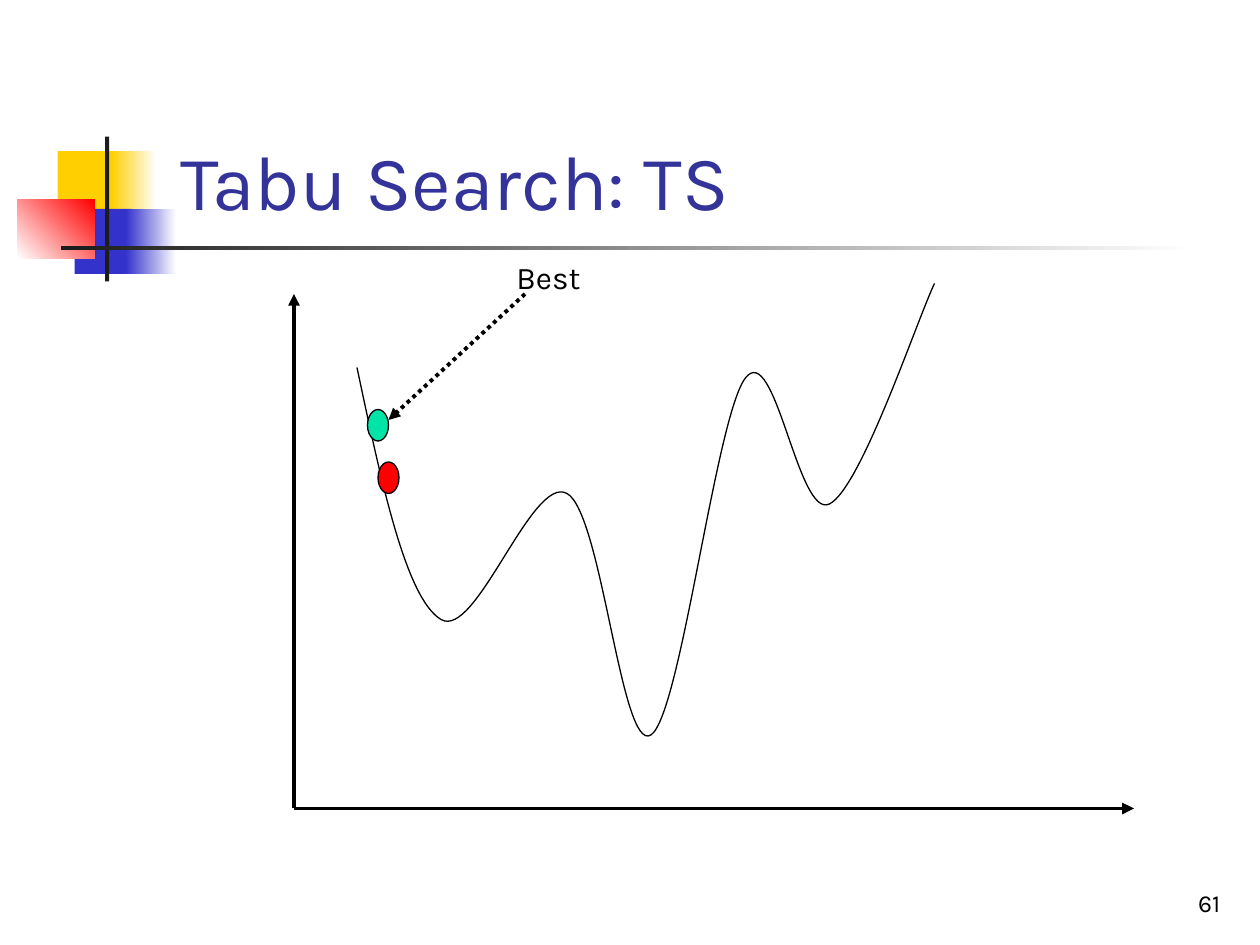
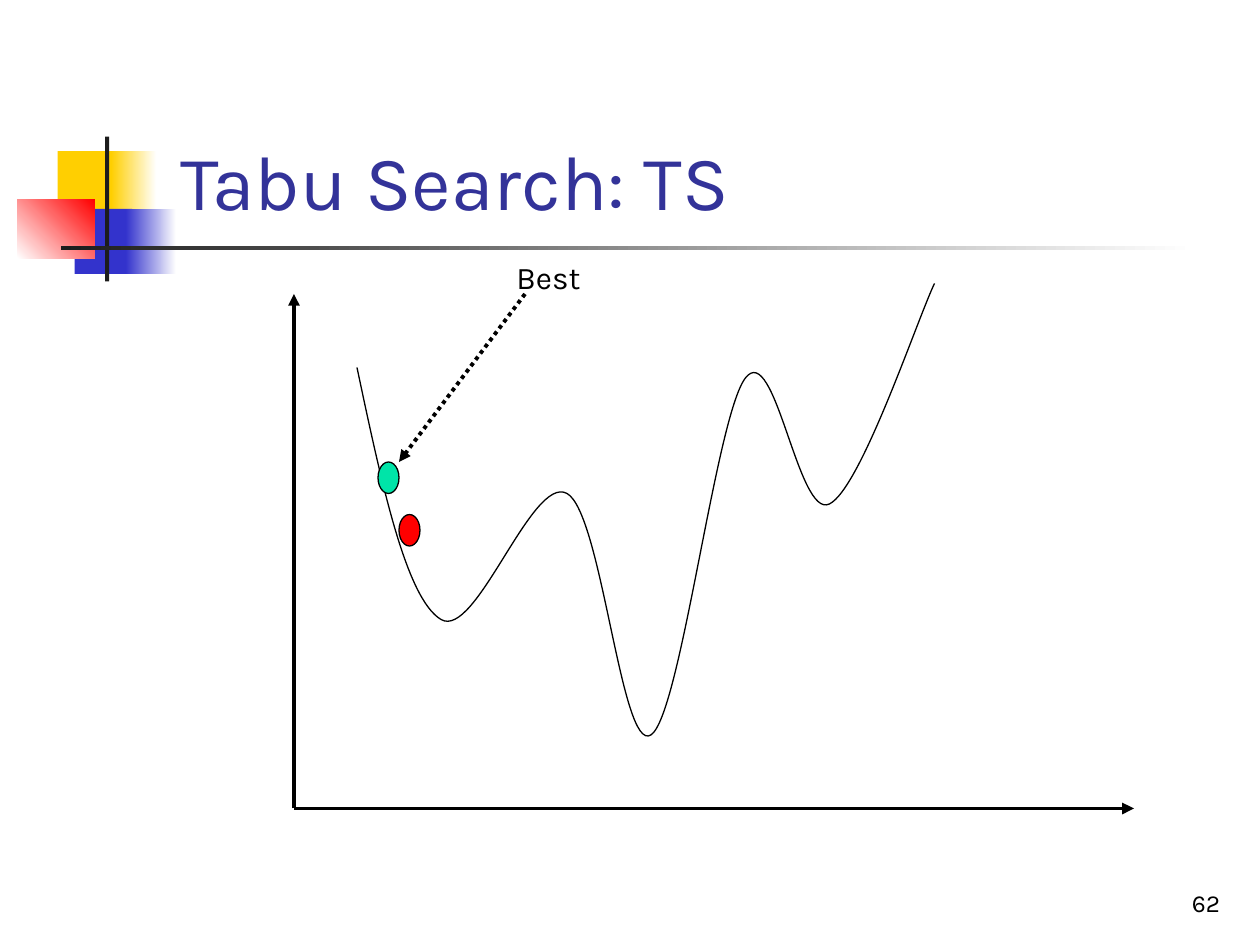
from dataclasses import dataclass

from lxml import etree
from pptx import Presentation
from pptx.dml.color import RGBColor
from pptx.enum.dml import MSO_LINE
from pptx.enum.shapes import MSO_CONNECTOR, MSO_SHAPE
from pptx.enum.text import MSO_ANCHOR, MSO_AUTO_SIZE, PP_ALIGN
from pptx.oxml.ns import qn
from pptx.util import Inches, Pt

RECT, OVAL = MSO_SHAPE.RECTANGLE, MSO_SHAPE.OVAL
STRAIGHT = MSO_CONNECTOR.STRAIGHT
DOTTED = MSO_LINE.ROUND_DOT
BOTTOM, TOP = MSO_ANCHOR.BOTTOM, MSO_ANCHOR.TOP
LEFT, RIGHT = PP_ALIGN.LEFT, PP_ALIGN.RIGHT
NO_FIT = MSO_AUTO_SIZE.NONE
TITLE_ONLY = 5

SLIDE_W, SLIDE_H = Inches(10), Inches(7.5)
COLS, ROWS = 120, 90


@dataclass(frozen=True)
class Theme:
    font: str = "Karla"
    title_size: int = 44
    label_size: int = 18
    number_size: int = 14
    thin: float = 0.75
    thick: float = 2.25
    title: str = "333399"
    ink: str = "000000"
    paper: str = "FFFFFF"
    yellow: str = "FFCF01"
    blue: str = "3333CC"
    red: str = "FF0000"
    bar: str = "1C1C1C"
    best: str = "00E4A8"
    current: str = "FF0000"


@dataclass(frozen=True)
class Box:
    """A region in columns and rows of the slide grid."""
    left: float
    top: float
    width: float
    height: float

    def point(self, x, y):
        return (round((self.left + x) * SLIDE_W / COLS),
                round((self.top + y) * SLIDE_H / ROWS))

    def area(self, x, y, w, h):
        return *self.point(x, y), round(w * SLIDE_W / COLS), round(h * SLIDE_H / ROWS)

    def whole(self):
        return self.area(0, 0, self.width, self.height)


THEME = Theme()
ORNAMENT = Box(1.65, 13, 112.15, 13.8)
TITLE = Box(16, 11.3, 102.2, 10.8)
NUMBER = Box(92.4, 82, 25, 6)
PLOT = Box(28, 24, 80, 53)

# Bottoms and peaks of the landscape, with a lead-in and a lead-out knot
KNOTS = [(0, -31), (6, 11), (14, 35), (26, 23), (34, 46), (43, 12),
         (51, 24), (61, 3), (61, 3)]
MARKER_W, MARKER_H = 2, 3


def rgb(color):
    return RGBColor.from_string(color)


def add_figure(slide, kind, area, colors, angle=0, outline=None):
    """Add a shape filled with one colour, or with a gradient of two."""
    sp = slide.shapes.add_shape(kind, *area)
    sp.shadow.inherit = False
    if len(colors) == 1:
        sp.fill.solid()
        sp.fill.fore_color.rgb = rgb(colors[0])
    else:
        sp.fill.gradient()
        sp.fill.gradient_angle = angle
        for stop, color in zip(sp.fill.gradient_stops, colors):
            stop.color.rgb = rgb(color)
    if outline:
        sp.line.color.rgb = rgb(outline)
        sp.line.width = Pt(THEME.thin)
    else:
        sp.line.fill.background()


def add_arrow(slide, start, end, dash=None):
    sp = slide.shapes.add_connector(STRAIGHT, *start, *end)
    sp.line.color.rgb = rgb(THEME.ink)
    sp.line.width = Pt(THEME.thick)
    if dash:
        sp.line.dash_style = dash
    props = sp._element.spPr
    etree.SubElement(props.find(qn("a:ln")), qn("a:tailEnd"), type="triangle")
    etree.SubElement(props, qn("a:effectLst"))


def write(sp, text, size, color, anchor=TOP, align=LEFT):
    tf = sp.text_frame
    frame_format = {"word_wrap": True, "auto_size": NO_FIT, "vertical_anchor": anchor}
    for name, value in frame_format.items():
        setattr(tf, name, value)
    p = tf.paragraphs[0]
    p.alignment = align
    r = p.add_run()
    r.text = text
    for name, value in {"name": THEME.font, "size": Pt(size)}.items():
        setattr(r.font, name, value)
    r.font.color.rgb = rgb(color)


def add_ornament(slide, box):
    t = THEME
    parts = [
        ((3.85, 1.4, 5.8, 6.2), [t.yellow], 0),
        ((8.95, 1.4, 4.3, 6.2), [t.yellow, t.paper], 0),
        ((5.45, 6.9, 5.5, 6.2), [t.blue], 0),
        ((10.35, 6.9, 4.8, 6.2), [t.blue, t.paper], 0),
        ((0, 6, 7.4, 5.6), [t.paper, t.red], 45),
        ((8.35, 0, 0.4, 13.8), [t.bar], 0),
        ((4.15, 10.4, 108, 0.4), [t.bar, t.paper], 0),
    ]
    for place, colors, angle in parts:
        add_figure(slide, RECT, box.area(*place), colors, angle)


def add_title(slide, box, text):
    sp = slide.shapes.title
    sp.left, sp.top, sp.width, sp.height = box.whole()
    write(sp, text, THEME.title_size, THEME.title, BOTTOM)


def add_number(slide, box, number):
    sp = slide.shapes.add_textbox(*box.whole())
    write(sp, str(number), THEME.number_size, THEME.ink, BOTTOM, RIGHT)


def spline(knots):
    """Return the Bezier points of a Catmull-Rom curve, after its first knot."""
    points = []
    for before, a, b, after in zip(knots, knots[1:], knots[2:], knots[3:]):
        points.append([p + (q - o) / 6 for o, p, q in zip(before, a, b)])
        points.append([q - (s - p) / 6 for p, q, s in zip(a, b, after)])
        points.append(b)
    return points


def add_landscape(slide, box):
    builder = slide.shapes.build_freeform(*box.point(*KNOTS[1]))
    builder.add_line_segments([box.point(*p) for p in spline(KNOTS)], close=False)
    sp = builder.convert_to_shape()
    sp.shadow.inherit = False
    sp.fill.background()
    sp.line.color.rgb = rgb(THEME.ink)
    sp.line.width = Pt(THEME.thin)
    # Every three straight segments become one Bezier segment
    outline = next(sp._element.iter(qn("a:path")))
    segments = outline.findall(qn("a:lnTo"))
    for i in range(0, len(segments), 3):
        curve = etree.SubElement(outline, qn("a:cubicBezTo"))
        for segment in segments[i:i + 3]:
            curve.append(segment[0])
            outline.remove(segment)


def add_plot(slide, box, best, current):
    origin = box.point(0, box.height)
    for tip in ((0, 4), (box.width, box.height)):
        add_arrow(slide, origin, box.point(*tip))
    add_landscape(slide, box)
    for place, color in ((best, THEME.best), (current, THEME.current)):
        area = box.area(*place, MARKER_W, MARKER_H)
        add_figure(slide, OVAL, area, [color], outline=THEME.ink)
    label = slide.shapes.add_textbox(*box.area(20, 0, 14, 4.8))
    write(label, "Best", THEME.label_size, THEME.ink)


def add_search_slide(prs, number, best, current, target):
    """Add one step of the search; the dotted arrow points at target."""
    slide = prs.slides.add_slide(prs.slide_layouts[TITLE_ONLY])
    add_ornament(slide, ORNAMENT)
    add_title(slide, TITLE, "Tabu Search: TS")
    add_number(slide, NUMBER, number)
    add_plot(slide, PLOT, best, current)
    add_arrow(slide, PLOT.point(22, 4), PLOT.point(*target), DOTTED)


def main():
    prs = Presentation()
    prs.slide_width, prs.slide_height = SLIDE_W, SLIDE_H
    steps = [
        ((7, 15), (8, 20), (9, 16)),
        ((8, 20), (10, 25), (10, 20)),
    ]
    for number, step in enumerate(steps, start=61):
        add_search_slide(prs, number, *step)
    prs.save("out.pptx")


if __name__ == "__main__":
    main()
